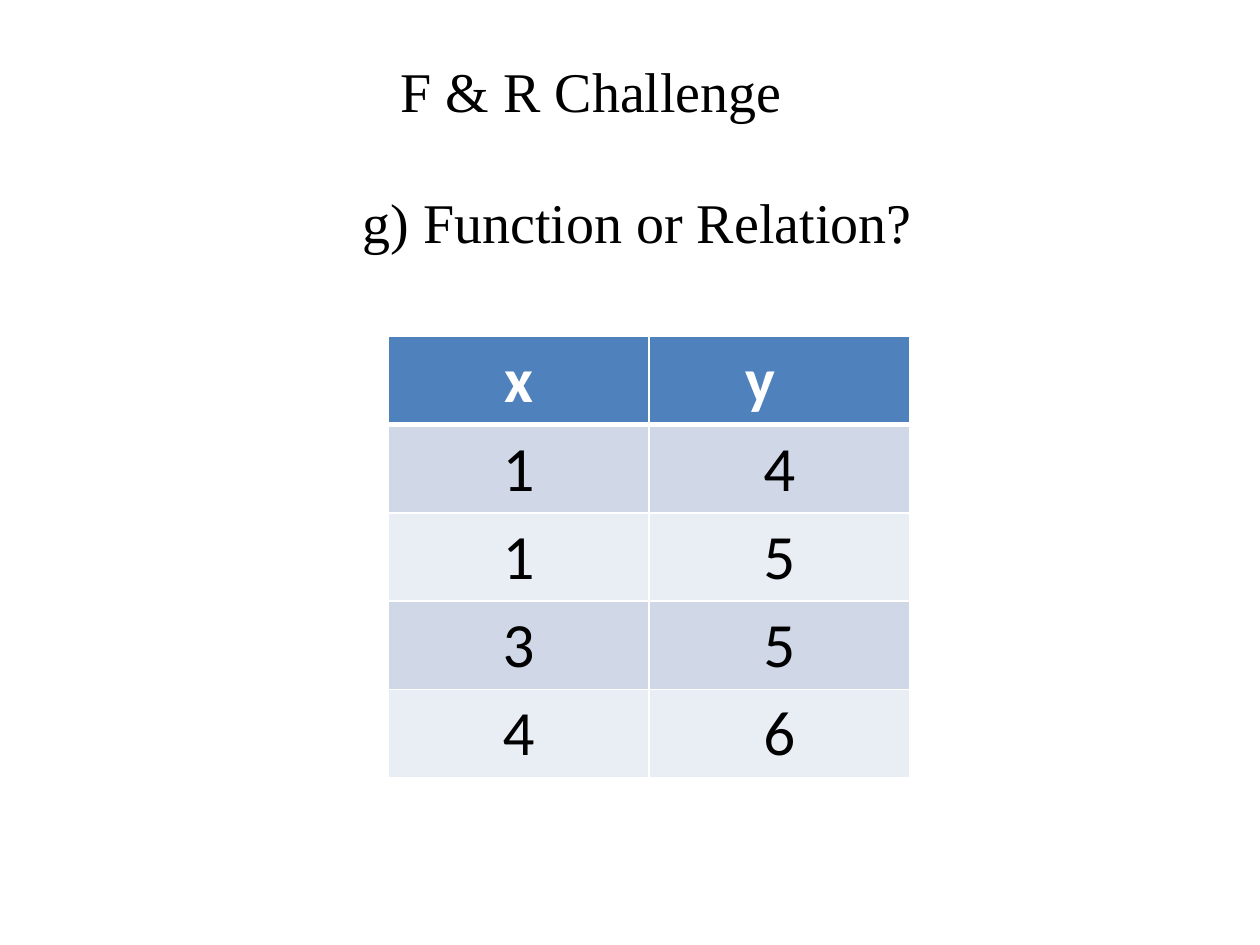
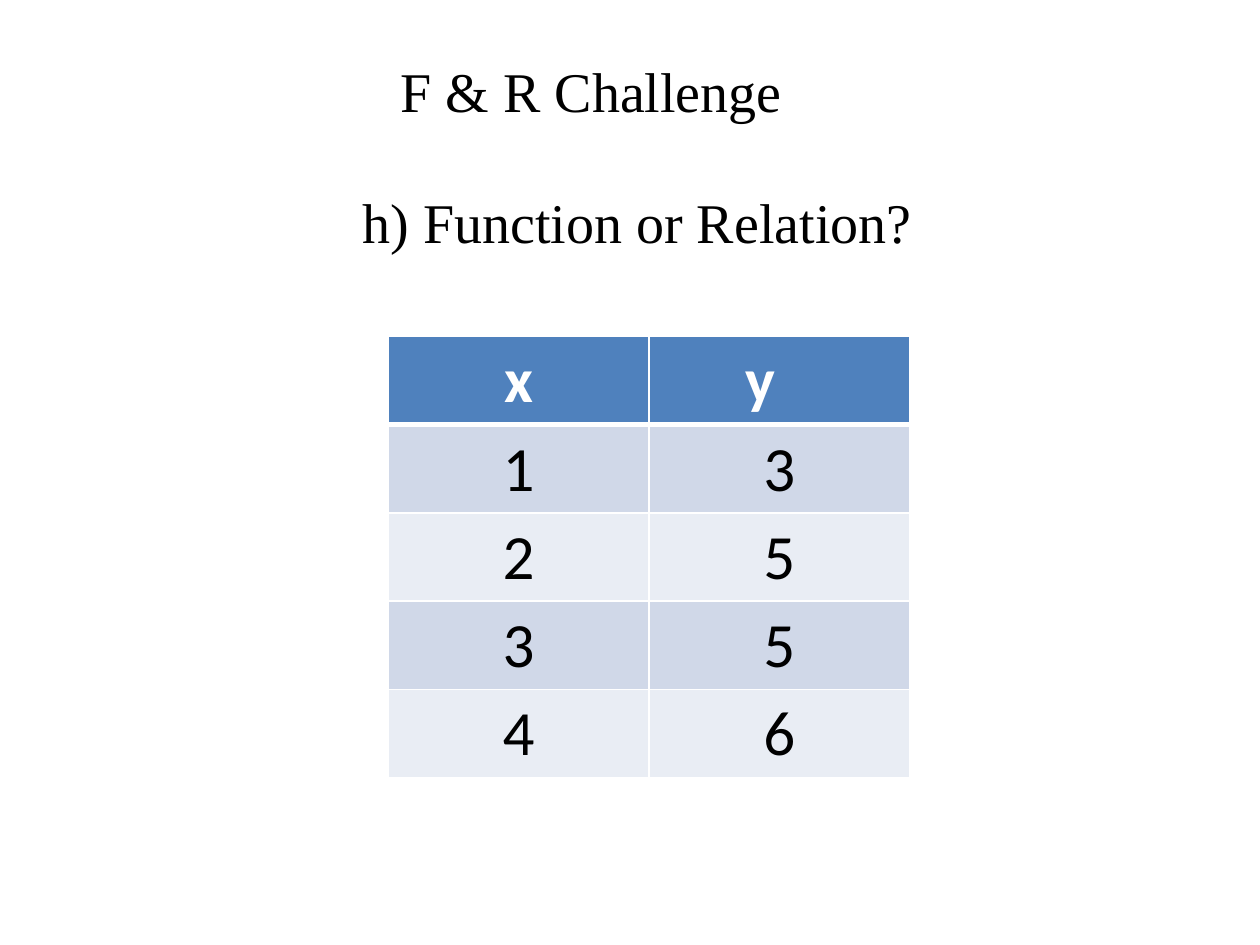
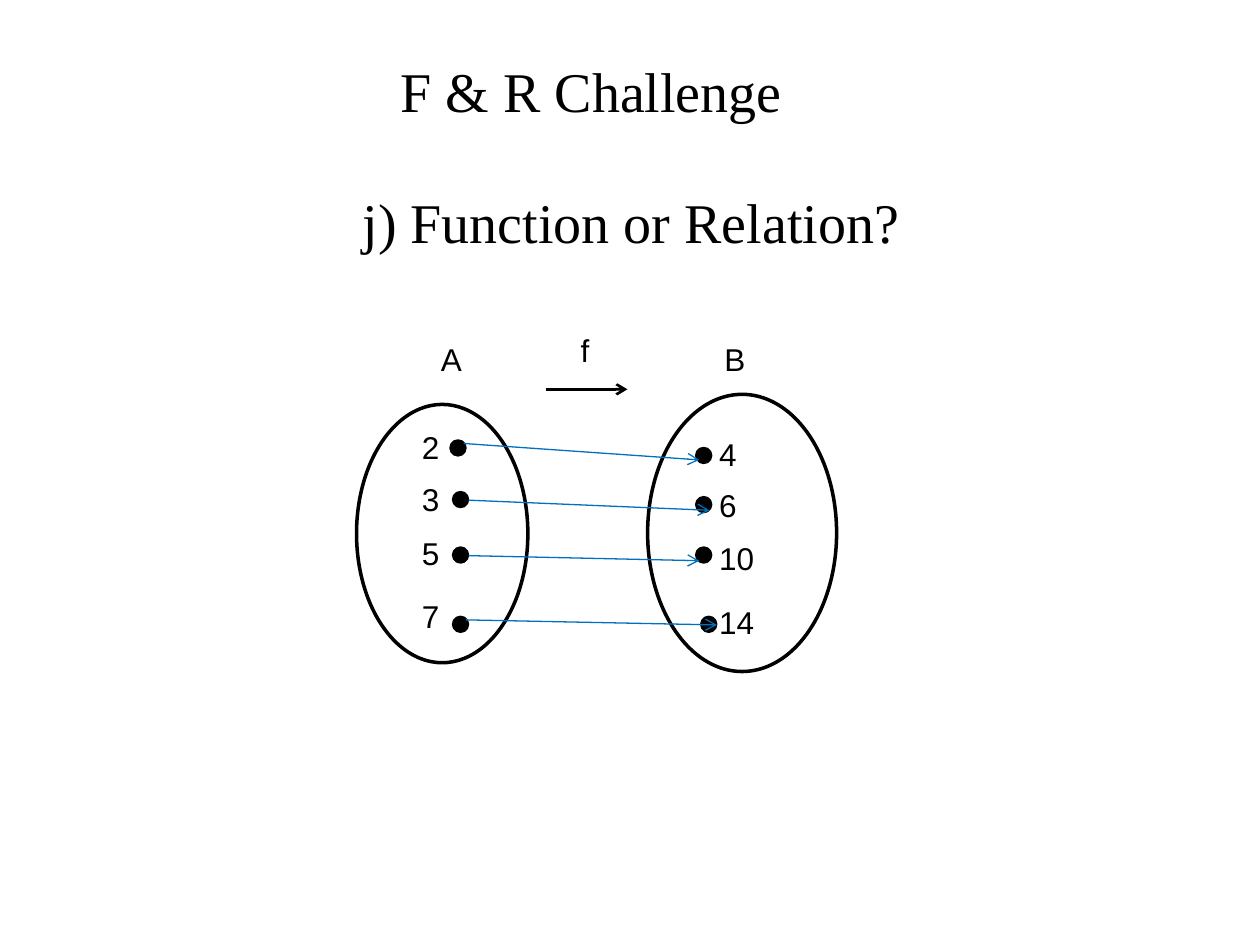
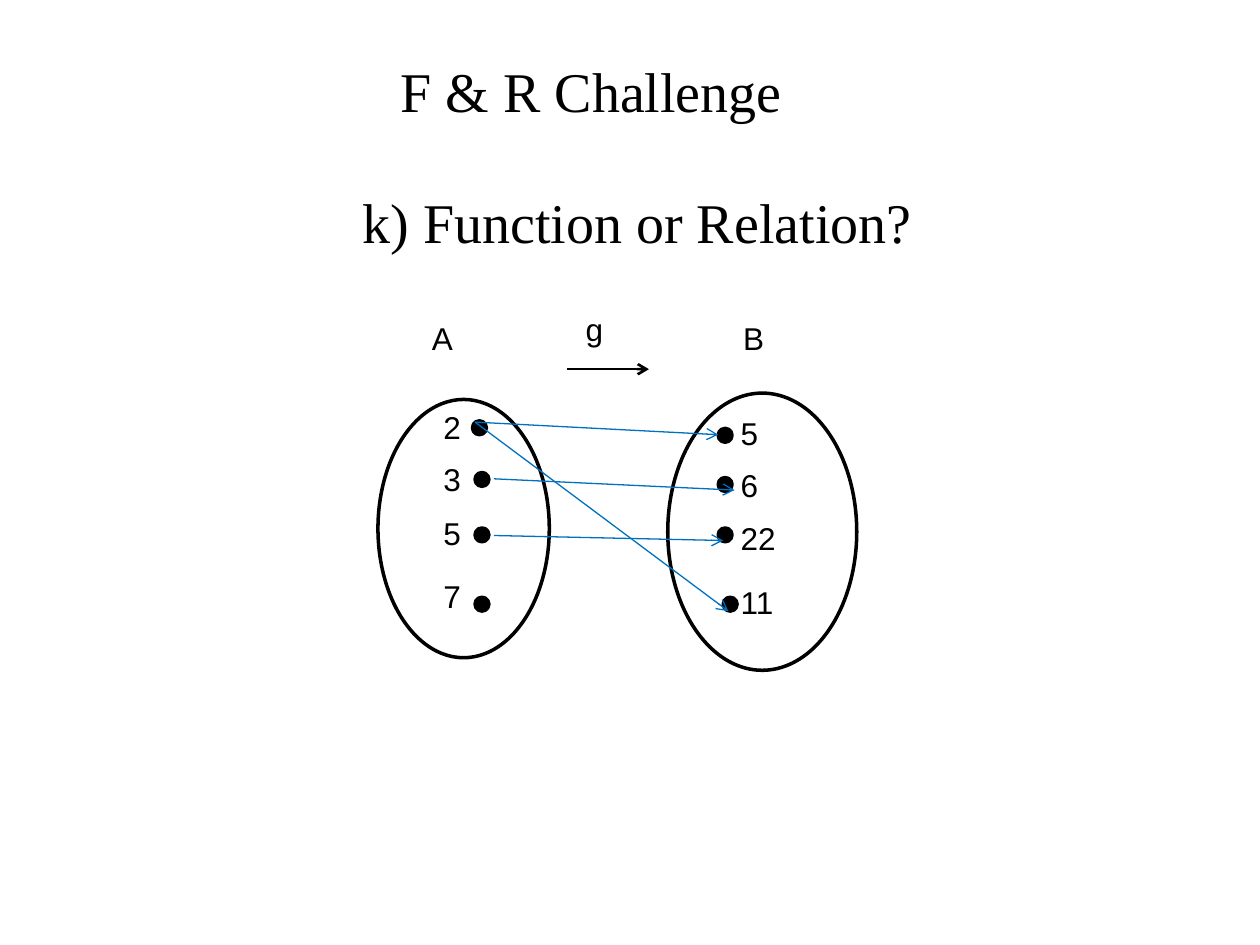
from dataclasses import dataclass

from lxml import etree
from pptx import Presentation
from pptx import util as u
from pptx.dml.color import RGBColor
from pptx.enum import shapes, text
from pptx.oxml import ns


@dataclass(frozen=True)
class Theme:
    ink: str = "000000"
    paper: str = "FFFFFF"
    link: str = "0070C0"
    header: str = "4F81BD"
    bands: tuple = ("D0D8E8", "E9EDF4")
    heading_font: str = "Times New Roman"
    table_font: str = "Calibri"
    label_font: str = "Arial"
    heading_size: int = 32
    table_size: int = 36
    label_size: int = 18


theme = Theme()
PX = 9144


def write(frame, content, font=theme.label_font, size=theme.label_size, color=theme.ink,
          bold=False, align=text.PP_ALIGN.LEFT, before=0, wrap=True):
    frame.word_wrap = wrap
    frame.auto_size = text.MSO_AUTO_SIZE.SHAPE_TO_FIT_TEXT
    frame.vertical_anchor = text.MSO_ANCHOR.TOP
    para = frame.paragraphs[0]
    para.alignment = align
    para.space_before = u.Pt(before)
    span = para.add_run()
    span.text = content
    span.font.name = font
    span.font.size = u.Pt(size)
    span.font.bold = bold
    span.font.color.rgb = RGBColor.from_string(color)


def draw_arrow(page, ends, color, width):
    arrow = page.shapes.add_connector(shapes.MSO_CONNECTOR.STRAIGHT, *(end * PX for end in ends))
    arrow.line.color.rgb = RGBColor.from_string(color)
    arrow.line.width = u.Pt(width)
    etree.SubElement(arrow.line._get_or_add_ln(), ns.qn("a:tailEnd"), type="arrow")
    etree.SubElement(arrow._element.spPr, ns.qn("a:effectLst"))


deck = Presentation()
deck.slide_width = 1000 * PX
deck.slide_height = 750 * PX

pages = {}
for letter, width in (("g", 460), ("h", 460), ("j", 454), ("k", 460)):
    page = deck.slides.add_slide(deck.slide_layouts[5])
    title = page.shapes.title
    title.left, title.top, title.width, title.height = (n * PX for n in (308, 40, 326, 64))
    question = page.shapes.add_textbox(278 * PX, 144 * PX, width * PX, 64 * PX)
    for box, words in ((title, "F & R Challenge"), (question, f"{letter}) Function or Relation?")):
        write(box.text_frame, words, font=theme.heading_font, size=theme.heading_size,
              before=4, wrap=False)
    pages[letter] = page

tables = {
    "g": [("x", "y"), (1, 4), (1, 5), (3, 5), (4, 6)],
    "h": [("x", "y"), (1, 3), (2, 5), (3, 5), (4, 6)],
}
for letter, rows in tables.items():
    table = pages[letter].shapes.add_table(5, 2, 308 * PX, 267 * PX, 414 * PX, 350 * PX).table
    for row, values in enumerate(rows):
        for column, value in enumerate(values):
            cell = table.cell(row, column)
            heading = row == 0
            cell.fill.solid()
            cell.fill.fore_color.rgb = RGBColor.from_string(
                theme.header if heading else theme.bands[(row - 1) % 2])
            indented = value == "y"
            if indented:
                cell.margin_left = 77 * PX
            write(cell.text_frame, str(value), font=theme.table_font, size=theme.table_size,
                  color=theme.paper if heading else theme.ink, bold=heading,
                  align=text.PP_ALIGN.LEFT if indented else text.PP_ALIGN.CENTER)
            properties = cell._tc.get_or_add_tcPr()
            top_width = 3 if row == 1 else 1
            bottom_width = 3 if heading else 1
            sides = (("lnL", 1), ("lnR", 1), ("lnT", top_width), ("lnB", bottom_width))
            for place, (side, points) in enumerate(sides):
                border = etree.Element(ns.qn(f"a:{side}"), w=str(u.Pt(points)))
                fill = etree.SubElement(border, ns.qn("a:solidFill"))
                etree.SubElement(fill, ns.qn("a:srgbClr"), val=theme.paper)
                properties.insert(place, border)

domain_rows = (335, 376, 419, 469)
range_rows = (340, 381, 423, 474)
dots = ((358, 350), (360, 391), (360, 435), (360, 490),
        (553, 356), (553, 395), (553, 435), (557, 490))
mappings = {
    "j": dict(
        shift=(0, 0), name="f", name_at=(451, 258),
        ovals=((283, 321, 136, 205), (514, 313, 150, 220)),
        sets=(("A", 340, 265), ("B", 565, 265)),
        domain=(2, 3, 5, 7), range=(4, 6, 10, 14),
        links=((372, 397, 563, 405), (372, 441, 555, 445),
               (368, 352, 555, 365), (370, 492, 569, 496))),
    "k": dict(
        shift=(17, -16), name="g", name_at=(455, 241),
        ovals=((300, 317, 136, 205), (530, 312, 150, 220)),
        sets=(("A", 333, 248), ("B", 580, 248)),
        domain=(2, 3, 5, 7), range=(5, 6, 22, 11),
        links=((392, 380, 583, 389), (392, 425, 574, 429),
               (377, 335, 570, 345), (377, 335, 578, 485))),
}
for letter, mapping in mappings.items():
    page = pages[letter]
    dx, dy = mapping["shift"]
    rounds = [(*oval, theme.paper) for oval in mapping["ovals"]]
    rounds += [(x + dx, y + dy, 11, 11, theme.ink) for x, y in dots]
    for *frame, color in rounds:
        oval = page.shapes.add_shape(shapes.MSO_SHAPE.OVAL, *(n * PX for n in frame))
        oval.shadow.inherit = False
        oval.fill.solid()
        oval.fill.fore_color.rgb = RGBColor.from_string(color)
        oval.line.color.rgb = RGBColor.from_string(theme.ink)
        oval.line.width = u.Pt(2)

    labels = [*mapping["sets"], (mapping["name"], *mapping["name_at"])]
    for members, x, tops in ((mapping["domain"], 325, domain_rows),
                             (mapping["range"], 561, range_rows)):
        labels += [(str(member), x + dx, top + dy) for member, top in zip(members, tops)]
    for label, x, y in labels:
        width = 63 if len(label) > 1 else 47
        box = page.shapes.add_textbox(x * PX, y * PX, width * PX, 40 * PX)
        write(box.text_frame, label)

    draw_arrow(page, (433 + dx, 309 + dy, 498 + dx, 309 + dy), theme.ink, 1.5)
    for link in mapping["links"]:
        draw_arrow(page, link, theme.link, 0.75)

deck.save("out.pptx")
